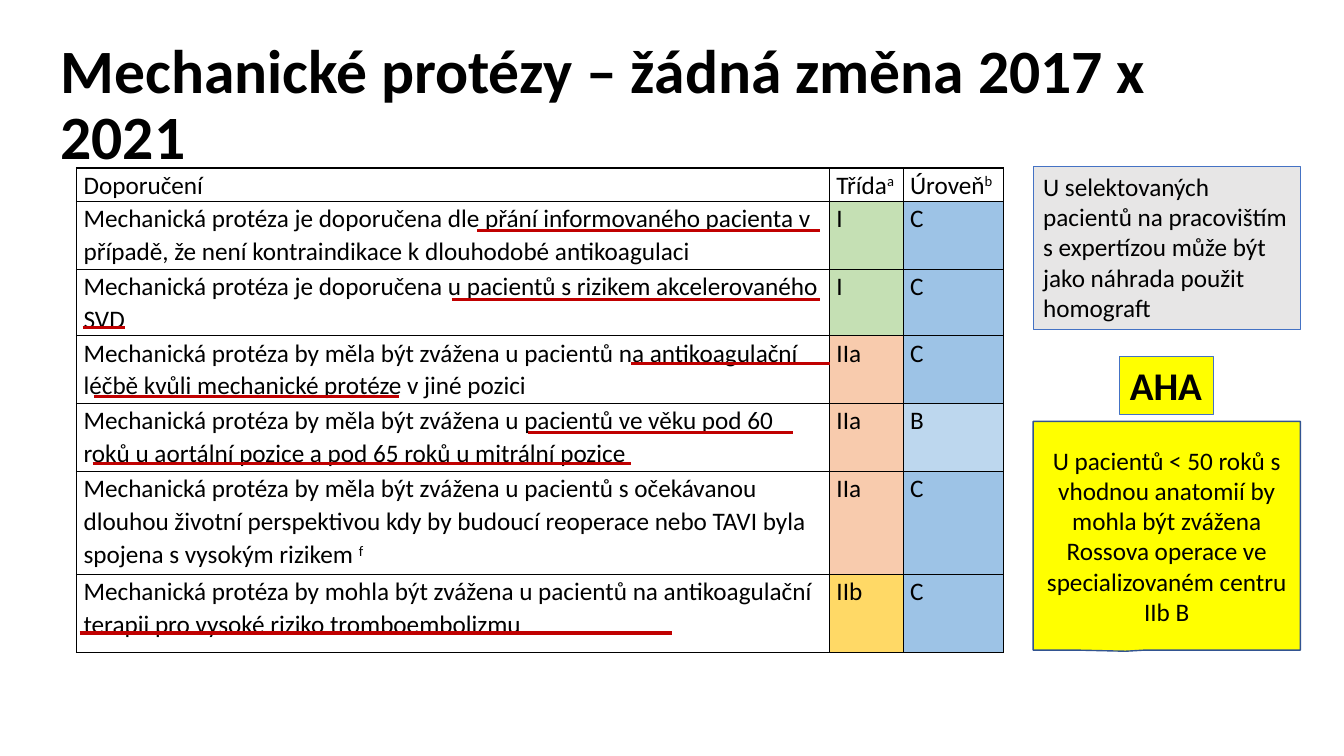
from lxml import etree
from pptx import Presentation
from pptx.dml.color import RGBColor
from pptx.enum.shapes import MSO_CONNECTOR, MSO_SHAPE
from pptx.enum.text import MSO_ANCHOR, MSO_AUTO_SIZE, PP_ALIGN
from pptx.oxml.ns import qn
from pptx.util import Pt

BLACK, YELLOW, RED, BLUE = "000000", "FFFF00", "C00000", "4472C4"
CLASS_FILL = {"I": "C5E0B4", "IIa": "F8CBAD", "IIb": "FFD966"}
LEVEL_FILL = {"B": "BDD7EE", "C": "9DC3E6"}


def color(hex_value):
    return RGBColor.from_string(hex_value)


def write(frame, text, size=18, bold=False, align=PP_ALIGN.LEFT, spacing=None):
    """Fill a text frame; a newline starts a paragraph, a caret a superscript."""
    frame.word_wrap = True
    for index, line in enumerate(text.split("\n")):
        paragraph = frame.add_paragraph() if index else frame.paragraphs[0]
        paragraph.alignment = align
        if spacing:
            paragraph.line_spacing = spacing
        for position, part in enumerate(line.split("^")):
            run = paragraph.add_run()
            run.text = part
            run.font.name, run.font.size, run.font.bold = "Calibri", Pt(size), bold
            run.font.color.rgb = color(BLACK)
            if position:
                run._r.get_or_add_rPr().set("baseline", "30000")


prs = Presentation()
prs.slide_width, prs.slide_height = Pt(960), Pt(540)
slide = prs.slides.add_slide(prs.slide_layouts[5])

title = slide.shapes.title
title.left, title.top, title.width, title.height = Pt(36), Pt(24), Pt(888), Pt(104)
title.text_frame.vertical_anchor = MSO_ANCHOR.MIDDLE
title.text_frame.margin_right = Pt(14)
write(title.text_frame, "Mechanické protézy – žádná změna 2017 x 2021",
      size=44, bold=True, spacing=0.9)

recommendations = [
    ("Doporučení", "Třída^a", "Úroveň^b"),
    ("Mechanická protéza je doporučena dle přání informovaného pacienta "
     "v případě, že není kontraindikace k dlouhodobé antikoagulaci", "I", "C"),
    ("Mechanická protéza je doporučena u pacientů s rizikem akcelerovaného SVD", "I", "C"),
    ("Mechanická protéza by měla být zvážena u pacientů na antikoagulační "
     "léčbě kvůli mechanické protéze v jiné pozici", "IIa", "C"),
    ("Mechanická protéza by měla být zvážena u pacientů ve věku pod 60 "
     "roků u aortální pozice a pod 65 roků u mitrální pozice", "IIa", "B"),
    ("Mechanická protéza by měla být zvážena u pacientů s očekávanou dlouhou životní "
     "perspektivou kdy by budoucí reoperace nebo TAVI byla spojena s vysokým rizikem ^f",
     "IIa", "C"),
    ("Mechanická protéza by mohla být zvážena u pacientů na antikoagulační "
     "terapii pro vysoké riziko tromboembolizmu", "IIb", "C"),
]
column_widths = [537.8, 52.6, 72]
row_heights = [24, 48.5, 47.5, 48.5, 48.5, 73.5, 56]

table = slide.shapes.add_table(
    len(row_heights), len(column_widths), Pt(54.7), Pt(120),
    Pt(sum(column_widths)), Pt(sum(row_heights))).table
table.first_row = table.horz_banding = False
for column, width in zip(table.columns, column_widths):
    column.width = Pt(width)
for row, height, texts in zip(table.rows, row_heights, recommendations):
    row.height = Pt(height)
    fills = None, CLASS_FILL.get(texts[1]), LEVEL_FILL.get(texts[2])
    for cell, text, fill in zip(row.cells, texts, fills):
        cell.margin_left = cell.margin_right = Pt(5)
        cell.margin_top = cell.margin_bottom = 0
        write(cell.text_frame, text, spacing=1.07)
        properties = cell._tc.get_or_add_tcPr()
        for side in ("a:lnL", "a:lnR", "a:lnT", "a:lnB"):
            border = etree.SubElement(properties, qn(side), w=str(Pt(1)))
            solid = etree.SubElement(border, qn("a:solidFill"))
            etree.SubElement(solid, qn("a:srgbClr"), val=BLACK)
        if fill:
            cell.fill.solid()
            cell.fill.fore_color.rgb = color(fill)
        else:
            cell.fill.background()

# Left end, right end and height of each underline
underlines = [
    (340.6, 585.4, 164.9), (322.6, 585.4, 213.8), (59, 89.3, 234),
    (377.3, 566.6, 308.9), (66.2, 450.7, 331.2), (56.9, 480.2, 452.2),
    (450.7, 592.6, 259.9), (67, 285.1, 283),
]
for start, end, y in underlines:
    underline = slide.shapes.add_connector(
        MSO_CONNECTOR.STRAIGHT, Pt(start), Pt(y), Pt(end), Pt(y))
    underline.line.color.rgb = color(RED)
    underline.line.width = Pt(2.25)
    etree.SubElement(underline._element.spPr, qn("a:effectLst"))

aha_group = slide.shapes.add_group_shape()
notes = [
    (aha_group, MSO_SHAPE.RECTANGULAR_CALLOUT, (738, 301, 190.8, 163.4), YELLOW, "325491", 1,
     "U pacientů < 50 roků s vhodnou anatomií by mohla být zvážena Rossova operace "
     "ve specializovaném centru\nIIb B", {"align": PP_ALIGN.CENTER}),
    (aha_group, MSO_SHAPE.RECTANGLE, (800, 254.9, 67, 41), YELLOW, BLUE, 0.75,
     "AHA", {"size": 28, "bold": True}),
    (slide, MSO_SHAPE.RECTANGLE, (738, 118.8, 190.8, 116.6), "E7E6E6", BLUE, 0.75,
     "U selektovaných pacientů na pracovištím s expertízou může být jako náhrada "
     "použit homograft", {}),
]
for parent, kind, box, fill, outline, weight, text, text_format in notes:
    note = parent.shapes.add_shape(kind, *map(Pt, box))
    note.shadow.inherit = False
    note.fill.solid()
    note.fill.fore_color.rgb = color(fill)
    note.line.color.rgb = color(outline)
    note.line.width = Pt(weight)
    write(note.text_frame, text, **text_format)
    if kind == MSO_SHAPE.RECTANGULAR_CALLOUT:
        note.adjustments[0], note.adjustments[1] = -0.154, 0.505
        note.text_frame.vertical_anchor = MSO_ANCHOR.MIDDLE
    else:
        note.text_frame.vertical_anchor = MSO_ANCHOR.TOP
        note.text_frame.auto_size = MSO_AUTO_SIZE.SHAPE_TO_FIT_TEXT
        note.text_frame.word_wrap = text != "AHA"

prs.save("out.pptx")
